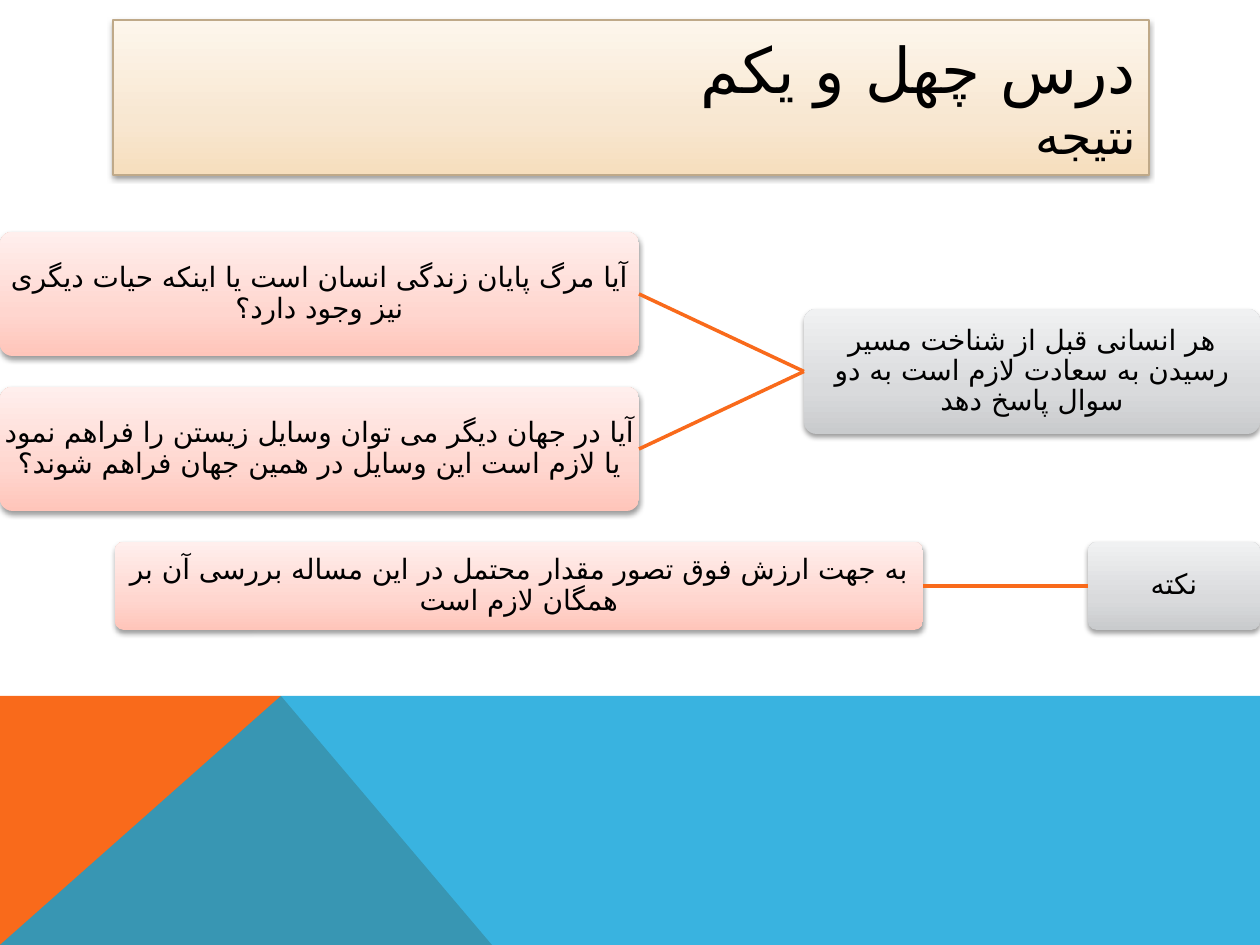
from copy import deepcopy
from lxml.etree import SubElement as Sub
from pptx import Presentation
from pptx.dml.color import RGBColor as RGB
from pptx.enum.shapes import MSO_CONNECTOR as LINK, MSO_SHAPE as SHAPE
from pptx.enum.text import MSO_ANCHOR as ANCHOR, PP_ALIGN as ALIGN
from pptx.oxml.ns import qn
from pptx.util import Pt

PX = 914400 / 126
WIDE, HIGH = 1260, 945
FONT, SCRIPT = "Cabin", "DejaVu Sans"  # Latin and Persian letters
COLOR = {"text": "000000", "orange": "F96A1B", "blue": "08A1D9", "edge": "BFA989"}
# Gradient colours from bottom to top
GRADS = {
    "title": ("F6DEBD", "F8E7D1", "FDF6EC"),
    "grey": ("C9CBCD", "D9DADC", "F0F1F2"),
    "pink": ("FFC5BA", "FFD6CF", "FFEFED"),
}
STOPS = (0, 0.35, 1)

TITLE = [("درس چهل و یکم", 36), ("نتیجه", 28)]
TITLE_BOX = (113, 20, 1036, 155)
# Each tree: a root and its children, as (text, box)
TREES = [
    (("هر انسانی قبل از شناخت مسیر رسیدن به سعادت لازم است به دو سوال پاسخ دهد",
      (804, 309, 456, 125)),
     [("آیا مرگ پایان زندگی انسان است یا اینکه حیات دیگری نیز وجود دارد؟",
       (0, 232, 639, 124)),
      ("آیا در جهان دیگر می توان وسایل زیستن را فراهم نمود یا لازم است "
       "این وسایل در همین جهان فراهم شوند؟",
       (0, 387, 639, 124))]),
    (("نکته", (1088, 542, 172, 88)),
     [("به جهت ارزش فوق تصور مقدار محتمل در این مساله بررسی آن بر همگان لازم است",
       (115, 542, 808, 88))]),
]
TOP, PEAK = 696, 281
BANDS = [
    ([(0, HIGH), (0, TOP), (PEAK, TOP), (492, HIGH)], "orange", 100),
    ([(0, HIGH), (PEAK, TOP), (WIDE, TOP), (WIDE, HIGH)], "blue", 80),
]


def emu(px):
    return round(px * PX)


def rgb(name):
    return RGB.from_string(COLOR[name])


def add_band(points, color, alpha):
    pen = slide.shapes.build_freeform(*points[0], scale=PX)
    pen.add_line_segments(points[1:], close=True)
    band = pen.convert_to_shape()
    band.shadow.inherit = False
    band.line.fill.background()
    band.fill.solid()
    band.fill.fore_color.rgb = rgb(color)
    if alpha < 100:
        tint = band.fill._xPr.find(".//" + qn("a:srgbClr"))
        Sub(tint, qn("a:alpha"), val=str(alpha * 1000))


def add_box(kind, box, grad):
    """Add a preset shape with an upward gradient and a soft shadow."""
    shape = slide.shapes.add_shape(kind, *map(emu, box))
    shape.line.fill.background()
    fill = shape.fill
    fill.gradient()
    fill.gradient_angle = 90
    stops = shape._element.spPr.find(".//" + qn("a:gsLst"))
    stops.append(deepcopy(stops[0]))
    for stop, place, color in zip(fill.gradient_stops, STOPS, GRADS[grad]):
        stop.position = place
        stop.color.rgb = RGB.from_string(color)
    shape.shadow.inherit = False
    effects = shape._element.spPr.find(qn("a:effectLst"))
    shade = Sub(effects, qn("a:outerShdw"), blurRad=str(Pt(3.1)), dist=str(Pt(1.6)),
                dir="5400000", rotWithShape="0")
    Sub(Sub(shade, qn("a:srgbClr"), val="000000"), qn("a:alpha"), val="38000")
    frame = shape.text_frame
    frame.word_wrap = True
    frame.vertical_anchor = ANCHOR.MIDDLE
    return shape


def write(shape, lines, align):
    """Fill one right-to-left paragraph with (text, size) lines."""
    para = shape.text_frame.paragraphs[0]
    para.alignment = align
    para._p.get_or_add_pPr().set("rtl", "1")
    for i, (text, size) in enumerate(lines):
        if i:
            para.add_line_break()
        run = para.add_run()
        run.text = text
        run.font.size = Pt(size)
        run.font.name = FONT
        run.font.color.rgb = rgb("text")
        Sub(run._r.rPr, qn("a:cs"), typeface=SCRIPT)
    return para


def add_node(text, box, grad):
    node = add_box(SHAPE.ROUNDED_RECTANGLE, box, grad)
    node.adjustments[0] = 0.1
    frame = node.text_frame
    frame.margin_left = frame.margin_right = emu(1)
    frame.margin_top = frame.margin_bottom = emu(1)
    write(node, [(text, 16)], ALIGN.CENTER).line_spacing = 0.9
    return node


def join(root, child):
    link = slide.shapes.add_connector(LINK.STRAIGHT, 0, 0, 0, 0)
    link.begin_connect(root, 1)
    link.end_connect(child, 3)
    link.line.color.rgb = rgb("orange")
    link.line.width = Pt(2)
    Sub(link._element.spPr, qn("a:effectLst"))


deck = Presentation()
deck.slide_width, deck.slide_height = emu(WIDE), emu(HIGH)
slide = deck.slides.add_slide(deck.slide_layouts[6])

for band in BANDS:
    add_band(*band)

title = add_box(SHAPE.RECTANGLE, TITLE_BOX, "title")
title.line.color.rgb = rgb("edge")
title.line.width = Pt(0.75)
write(title, TITLE, ALIGN.RIGHT)

for root, children in TREES:
    hub = add_node(*root, "grey")
    for child in children:
        join(hub, add_node(*child, "pink"))

deck.save("out.pptx")
